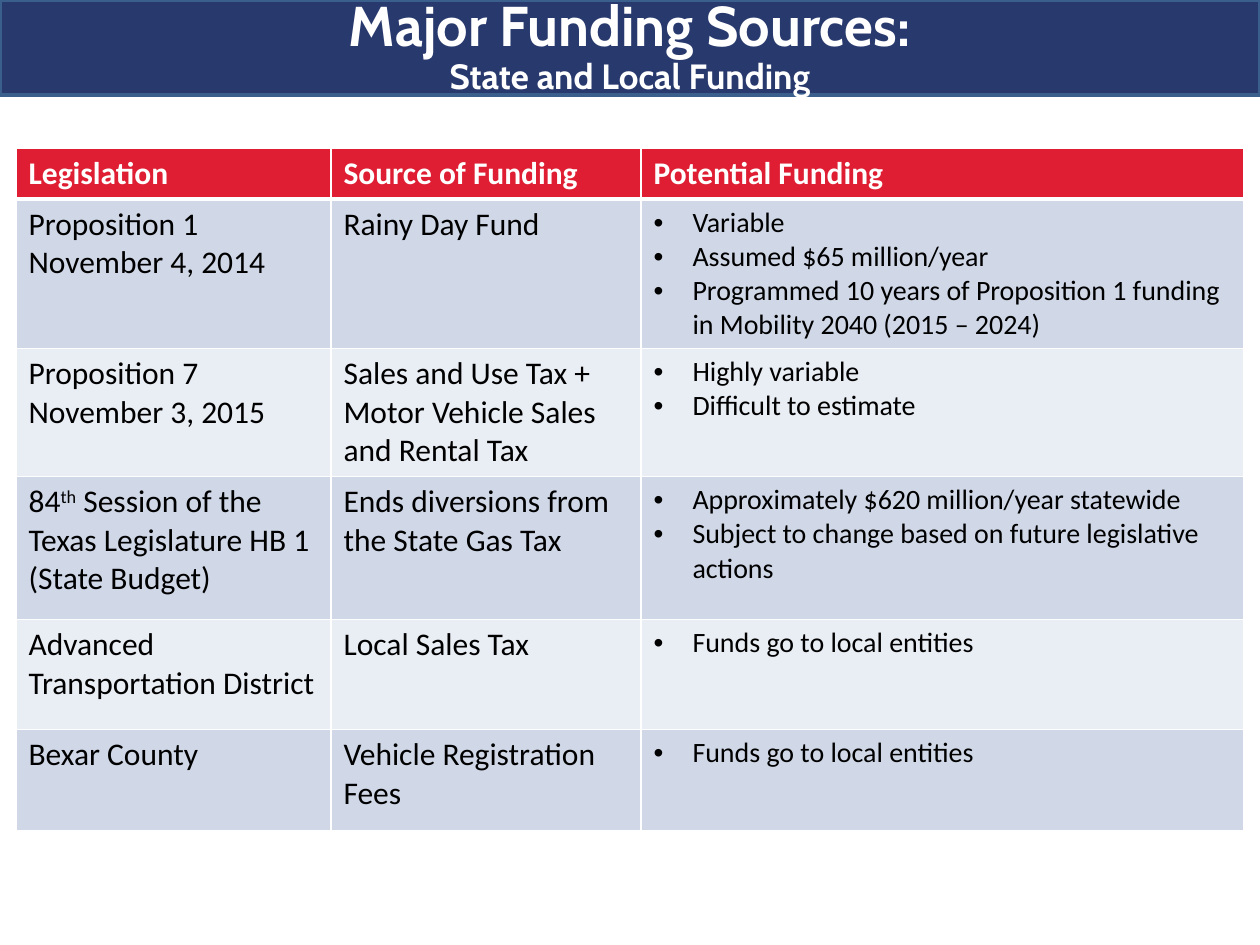
from dataclasses import dataclass

from lxml import etree
from pptx import Presentation
from pptx.dml.color import RGBColor
from pptx.enum.shapes import MSO_SHAPE
from pptx.enum.text import MSO_ANCHOR, MSO_AUTO_SIZE, PP_ALIGN
from pptx.oxml.ns import qn
from pptx.util import Pt

PX = 914400 // 126
RECTANGLE = MSO_SHAPE.RECTANGLE
MIDDLE = MSO_ANCHOR.MIDDLE
NO_AUTOFIT = MSO_AUTO_SIZE.NONE
CENTER = PP_ALIGN.CENTER
TITLE_ONLY = 5


@dataclass(frozen=True)
class Theme:
    band: str = "28396D"
    band_line: str = "3A5F8C"
    header: str = "DF1E33"
    stripes: tuple[str, str] = ("D0D8E8", "E9EDF4")
    white: str = "FFFFFF"
    black: str = "000000"
    title_font: str = "Cabin"
    table_font: str = "Calibri"
    title_size: int = 32
    subtitle_size: int = 20
    cell_size: int = 18
    bullet_size: int = 16


@dataclass(frozen=True)
class Funding:
    """One table row; text between carets is superscript."""
    legislation: list[str]
    source: str
    potential: list[str]
    height: int


THEME = Theme()
SLIDE_WIDTH, SLIDE_HEIGHT = 1260, 945
BAND_HEIGHT = 95
TABLE_LEFT, TABLE_TOP = 16, 148
COLUMN_WIDTHS = (315, 310, 603)
HEADER_HEIGHT = 44
BULLET_INDENT = 39
HEADINGS = ("Legislation", "Source of Funding", "Potential Funding")
FUNDINGS = [
    Funding(["Proposition 1", "November 4, 2014"], "Rainy Day Fund",
            ["Variable", "Assumed $65 million/year",
             "Programmed 10 years of Proposition 1 funding in Mobility 2040 (2015 – 2024)"], 144),
    Funding(["Proposition 7", "November 3, 2015"],
            "Sales and Use Tax + Motor Vehicle Sales and Rental Tax",
            ["Highly variable", "Difficult to estimate"], 110),
    Funding(["84^th^ Session of the Texas Legislature HB 1 (State Budget)"],
            "Ends diversions from the State Gas Tax",
            ["Approximately $620 million/year statewide",
             "Subject to change based on future legislative actions"], 143),
    Funding(["Advanced Transportation District"], "Local Sales Tax",
            ["Funds go to local entities"], 110),
    Funding(["Bexar County"], "Vehicle Registration Fees",
            ["Funds go to local entities"], 101),
]


def px(length: int) -> int:
    return length * PX


def style_run(run, color: str, **formats) -> None:
    for name, value in formats.items():
        setattr(run.font, name, value)
    run.font.color.rgb = RGBColor.from_string(color)


def add_bullet(paragraph) -> None:
    properties = paragraph._p.get_or_add_pPr()
    properties.set("marL", str(px(BULLET_INDENT)))
    properties.set("indent", str(-px(BULLET_INDENT)))
    etree.SubElement(properties, qn("a:buFont"), typeface="Arial")
    etree.SubElement(properties, qn("a:buChar"), char="•")


def add_borders(cell, bottom: int = 1) -> None:
    """Put white edges ahead of the fill, as the schema orders them."""
    properties = cell._tc.get_or_add_tcPr()
    edges = {"lnL": 1, "lnR": 1, "lnT": 1, "lnB": bottom}
    for position, (edge, width) in enumerate(edges.items()):
        line = etree.Element(qn(f"a:{edge}"), w=str(Pt(width)))
        fill = etree.SubElement(line, qn("a:solidFill"))
        etree.SubElement(fill, qn("a:srgbClr"), val=THEME.white)
        properties.insert(position, line)


def fill_cell(cell, lines: list[str], fill: str, header: bool = False,
              bulleted: bool = False) -> None:
    cell.fill.solid()
    cell.fill.fore_color.rgb = RGBColor.from_string(fill)
    add_borders(cell, bottom=3 if header else 1)
    size = THEME.bullet_size if bulleted else THEME.cell_size
    for number, line in enumerate(lines):
        frame = cell.text_frame
        paragraph = frame.add_paragraph() if number else frame.paragraphs[0]
        if bulleted:
            add_bullet(paragraph)
        for piece, words in enumerate(line.split("^")):
            run = paragraph.add_run()
            run.text = words
            style_run(run, THEME.white if header else THEME.black,
                      name=THEME.table_font, size=Pt(size), bold=header)
            if piece % 2:
                run.font._element.set("baseline", "30000")


def add_heading(slide) -> None:
    title = slide.shapes.title
    band = slide.shapes.add_shape(RECTANGLE, 0, 0, px(SLIDE_WIDTH), px(BAND_HEIGHT))
    band.shadow.inherit = False
    band.fill.solid()
    band.fill.fore_color.rgb = RGBColor.from_string(THEME.band)
    band.line.color.rgb = RGBColor.from_string(THEME.band_line)
    band.line.width = Pt(2)
    title.element.addprevious(band.element)

    place = {"left": 0, "top": 0, "width": px(SLIDE_WIDTH), "height": px(BAND_HEIGHT)}
    for name, value in place.items():
        setattr(title, name, value)
    frame = title.text_frame
    for name, value in {"word_wrap": True, "auto_size": NO_AUTOFIT,
                        "vertical_anchor": MIDDLE}.items():
        setattr(frame, name, value)
    heading = frame.paragraphs[0]
    heading.alignment = CENTER
    heading.line_spacing = 0.9
    for words, size in (("Major Funding Sources:", THEME.title_size),
                        ("State and Local Funding", THEME.subtitle_size)):
        if heading.runs:
            heading.add_line_break()
            etree.SubElement(heading._p[-1], qn("a:rPr"), sz=str(THEME.title_size * 100))
        run = heading.add_run()
        run.text = words
        style_run(run, THEME.white, name=THEME.title_font, size=Pt(size), bold=True)


def add_funding_table(slide) -> None:
    heights = [HEADER_HEIGHT] + [funding.height for funding in FUNDINGS]
    table = slide.shapes.add_table(
        len(heights), len(COLUMN_WIDTHS), px(TABLE_LEFT), px(TABLE_TOP),
        px(sum(COLUMN_WIDTHS)), px(sum(heights))).table
    table.horz_banding = False
    for column, width in zip(table.columns, COLUMN_WIDTHS):
        column.width = px(width)
    for row, height in zip(table.rows, heights):
        row.height = px(height)
    for column, heading in enumerate(HEADINGS):
        fill_cell(table.cell(0, column), [heading], THEME.header, header=True)
    for row, funding in enumerate(FUNDINGS, start=1):
        stripe = THEME.stripes[(row - 1) % 2]
        fill_cell(table.cell(row, 0), funding.legislation, stripe)
        fill_cell(table.cell(row, 1), [funding.source], stripe)
        fill_cell(table.cell(row, 2), funding.potential, stripe, bulleted=True)


def main() -> None:
    presentation = Presentation()
    presentation.slide_width = px(SLIDE_WIDTH)
    presentation.slide_height = px(SLIDE_HEIGHT)
    slide = presentation.slides.add_slide(presentation.slide_layouts[TITLE_ONLY])
    add_heading(slide)
    add_funding_table(slide)
    presentation.save("out.pptx")


if __name__ == "__main__":
    main()
